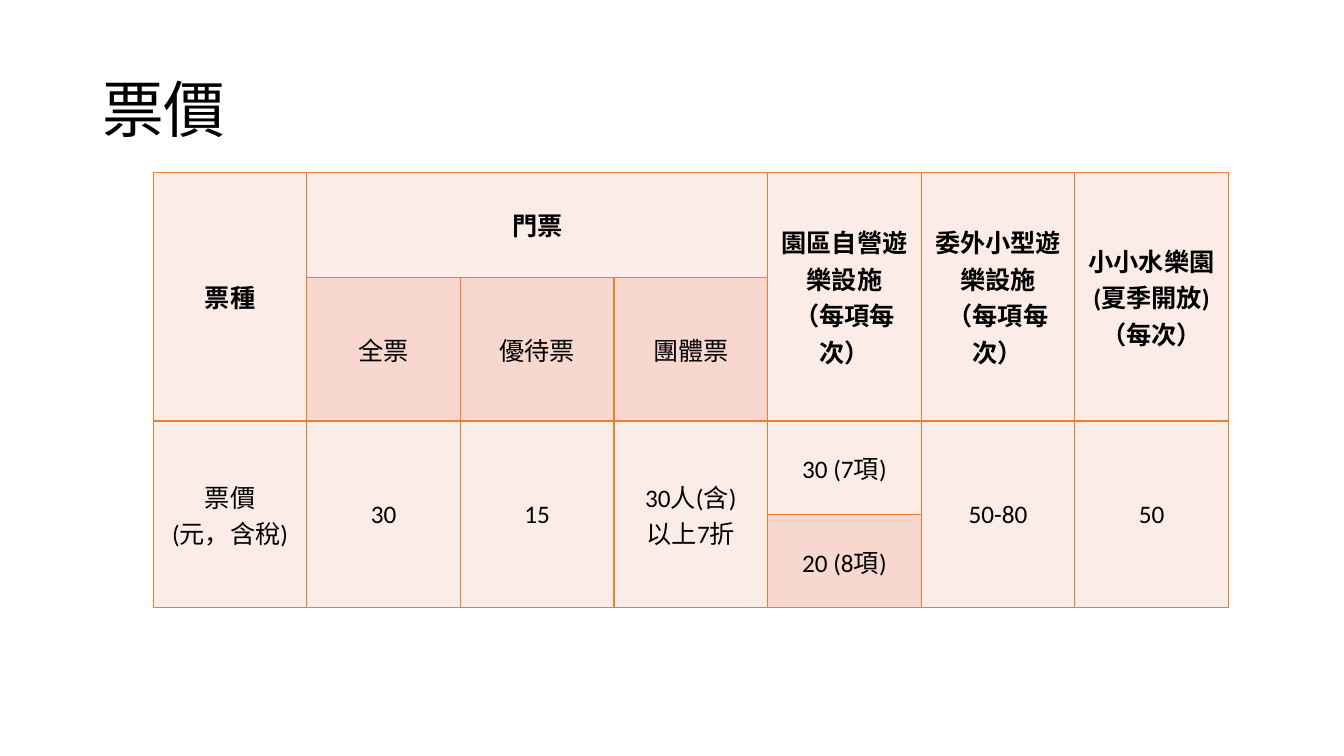
from dataclasses import dataclass

from lxml import etree
from pptx import Presentation
from pptx import util as u
from pptx.dml.color import RGBColor
from pptx.enum import text
from pptx.oxml import ns

PX = 9525


@dataclass(frozen=True)
class Theme:
    font: str = "Calibri"
    ink: str = "000000"
    border: str = "ED7D31"
    light: str = "FCECE8"
    dark: str = "F8D7CE"
    title_size: int = 44
    cell_size: int = 18


THEME = Theme()

PRICES = [
    ["票種", "門票", None, None, "園區自營遊樂設施\v（每項每次）",
     "委外小型遊樂設施\v（每項每次）", "小小水樂園\v(夏季開放)\v（每次）"],
    [None, "全票", "優待票", "團體票", None, None, None],
    ["票價\v(元，含稅)", "30", "15", "30人(含)\v以上7折", "30 (7項)", "50-80", "50"],
    [None, None, None, None, "20 (8項)", None, None],
]
ROW_HEIGHTS = [100, 137, 89, 89]
TABLE_WIDTH = 1024
MERGES = [((0, 1), (0, 3))]
MERGES += [((0, c), (1, c)) for c in (0, 4, 5, 6)]
MERGES += [((2, c), (3, c)) for c in (0, 1, 2, 3, 5, 6)]


def px(*lengths):
    return [u.Emu(n * PX) for n in lengths]


def style_runs(p, size, bold=False):
    for r in p.runs:
        r.font.name = THEME.font
        r.font.size = u.Pt(size)
        r.font.bold = bold
        r.font.color.rgb = RGBColor.from_string(THEME.ink)


def add_title(s, words, box):
    tf = s.shapes.add_textbox(*px(*box)).text_frame
    tf.word_wrap = True
    tf.vertical_anchor = text.MSO_ANCHOR.MIDDLE
    tf.text = words
    p = tf.paragraphs[0]
    p.line_spacing = 0.9
    style_runs(p, THEME.title_size)


def add_borders(cell):
    tc_pr = cell._tc.get_or_add_tcPr()
    for side in ("a:lnL", "a:lnR", "a:lnT", "a:lnB"):
        ln = etree.SubElement(tc_pr, ns.qn(side), w=str(u.Pt(1)))
        fill = etree.SubElement(ln, ns.qn("a:solidFill"))
        etree.SubElement(fill, ns.qn("a:srgbClr"), val=THEME.border)


def fill_cell(cell, words, colour, bold):
    add_borders(cell)
    cell.fill.solid()
    cell.fill.fore_color.rgb = RGBColor.from_string(colour)
    cell.vertical_anchor = text.MSO_ANCHOR.MIDDLE
    cell.margin_left = cell.margin_right = u.Inches(0.03)
    cell.margin_top = cell.margin_bottom = u.Inches(0.03)
    if words:
        cell.text = words
        p = cell.text_frame.paragraphs[0]
        p.alignment = text.PP_ALIGN.CENTER
        style_runs(p, THEME.cell_size, bold)


def add_price_table(s, left, top):
    box = px(left, top, TABLE_WIDTH, sum(ROW_HEIGHTS))
    tbl = s.shapes.add_table(len(PRICES), len(PRICES[0]), *box).table
    tbl.first_row = tbl.horz_banding = False
    for col in tbl.columns:
        col.width = u.Emu(TABLE_WIDTH * PX // len(PRICES[0]))
    for row, height in zip(tbl.rows, px(*ROW_HEIGHTS)):
        row.height = height
    for first, last in MERGES:
        tbl.cell(*first).merge(tbl.cell(*last))
    for i, row in enumerate(PRICES):
        for j, words in enumerate(row):
            colour = THEME.dark if i % 2 and words else THEME.light
            fill_cell(tbl.cell(i, j), words, colour, i == 0)


def main():
    prs = Presentation()
    prs.slide_width, prs.slide_height = px(1280, 720)
    s = prs.slides.add_slide(prs.slide_layouts[6])
    add_title(s, "票價", (88, 38, 1104, 139))
    add_price_table(s, 146, 164)
    prs.save("out.pptx")


if __name__ == "__main__":
    main()
